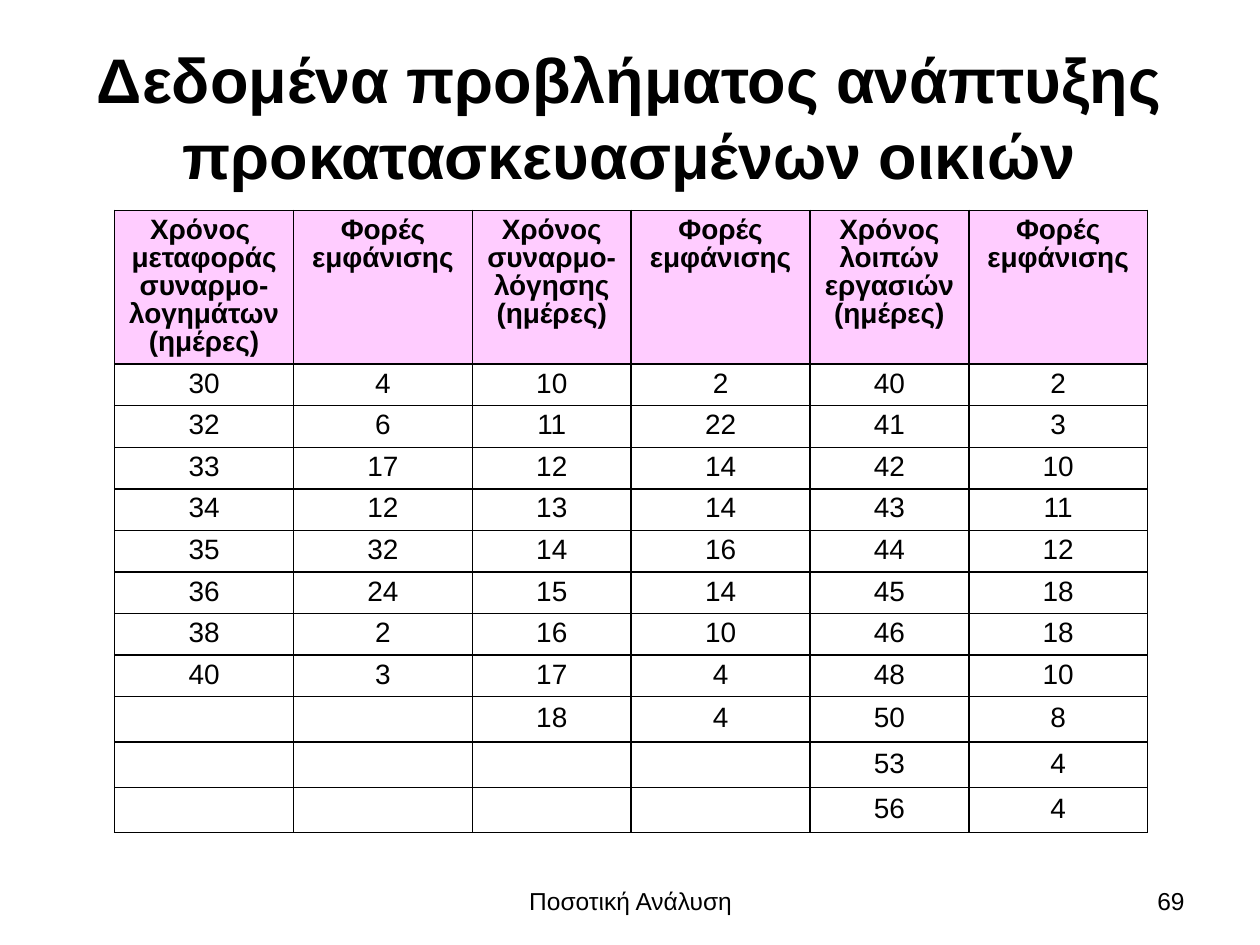
from lxml import etree
from pptx import Presentation, util as u
from pptx.dml.color import RGBColor
from pptx.enum import text
from pptx.oxml import ns

FONT = "Arial"
BLACK, PINK = "000000", "FFCCFF"
TITLE = "Δεδομένα προβλήματος ανάπτυξης προκατασκευασμένων οικιών"
FREQUENCY = "Φορές εμφάνισης"
HEADERS = [
    "Χρόνος \nμεταφοράς συναρμο-λογημάτων \n(ημέρες)", FREQUENCY,
    "Χρόνος συναρμο-λόγησης\n(ημέρες)", FREQUENCY,
    "Χρόνος λοιπών εργασιών\n(ημέρες)", FREQUENCY,
]
ROWS = [
    (30, 4, 10, 2, 40, 2),
    (32, 6, 11, 22, 41, 3),
    (33, 17, 12, 14, 42, 10),
    (34, 12, 13, 14, 43, 11),
    (35, 32, 14, 16, 44, 12),
    (36, 24, 15, 14, 45, 18),
    (38, 2, 16, 10, 46, 18),
    (40, 3, 17, 4, 48, 10),
    ("", "", 18, 4, 50, 8),
    ("", "", "", "", 53, 4),
    ("", "", "", "", 56, 4),
]
COLUMN_WIDTHS = [1.42, 1.42, 1.26, 1.42, 1.26, 1.42]
HEADER_HEIGHT, FULL_ROW, PARTIAL_ROW = 1.22, 0.33, 0.36
FOOTERS = [
    ("Ποσοτική Ανάλυση", (3.42, 6.95, 3.17, 0.4), text.PP_ALIGN.CENTER),
    ("69", (7.17, 6.95, 2.33, 0.4), text.PP_ALIGN.RIGHT),
]


def color(value):
    return RGBColor.from_string(value)


def write(frame, content, size, bold=False, align=text.PP_ALIGN.CENTER, spacing=None):
    frame.text = content
    frame.word_wrap = True
    for paragraph in frame.paragraphs:
        paragraph.alignment = align
        paragraph.line_spacing = spacing
        paragraph.font.name = FONT
        paragraph.font.size = u.Pt(size)
        paragraph.font.bold = bold
        paragraph.font.color.rgb = color(BLACK)


def add_borders(cell):
    properties = cell._tc.get_or_add_tcPr()
    for index, side in enumerate(("lnL", "lnR", "lnT", "lnB")):
        line = etree.Element(ns.qn(f"a:{side}"), w=str(u.Pt(1)))
        fill = etree.SubElement(line, ns.qn("a:solidFill"))
        etree.SubElement(fill, ns.qn("a:srgbClr"), val=BLACK)
        properties.insert(index, line)


def fill_cell(cell, content, is_header):
    cell.margin_left = cell.margin_right = u.Inches(0.11)
    cell.margin_top = cell.margin_bottom = u.Inches(0.05)
    cell.vertical_anchor = text.MSO_ANCHOR.TOP if is_header else text.MSO_ANCHOR.MIDDLE
    if is_header:
        cell.fill.solid()
        cell.fill.fore_color.rgb = color(PINK)
    else:
        cell.fill.background()
    add_borders(cell)
    write(cell.text_frame, content, 16, bold=is_header, spacing=0.9)
    if not content:
        # An empty cell takes its line height from the end-of-paragraph size.
        paragraph = cell.text_frame.paragraphs[0]
        etree.SubElement(paragraph._p, ns.qn("a:endParaRPr"), sz="1600")


def add_data_table(slide):
    heights = [HEADER_HEIGHT] + [PARTIAL_ROW if "" in row else FULL_ROW for row in ROWS]
    table = slide.shapes.add_table(
        len(heights), len(COLUMN_WIDTHS), u.Inches(0.91), u.Inches(1.67),
        u.Inches(sum(COLUMN_WIDTHS)), u.Inches(sum(heights))).table
    table.horz_banding = False
    for column, width in zip(table.columns, COLUMN_WIDTHS):
        column.width = u.Inches(width)
    for row, height, values in zip(table.rows, heights, [HEADERS] + ROWS):
        row.height = u.Inches(height)
        for cell, value in zip(row.cells, values):
            fill_cell(cell, str(value), values is HEADERS)


def main():
    presentation = Presentation()
    presentation.slide_width, presentation.slide_height = u.Inches(10), u.Inches(7.5)
    slide = presentation.slides.add_slide(presentation.slide_layouts[5])

    title = slide.shapes.title
    title.left, title.top, title.width, title.height = map(u.Inches, (0.43, 0.3, 9.13, 1.25))
    write(title.text_frame, TITLE, 36, bold=True)
    title.text_frame.vertical_anchor = text.MSO_ANCHOR.MIDDLE

    add_data_table(slide)

    for content, box, align in FOOTERS:
        frame = slide.shapes.add_textbox(*map(u.Inches, box)).text_frame
        write(frame, content, 14, align=align)
        frame.vertical_anchor = text.MSO_ANCHOR.MIDDLE

    presentation.save("out.pptx")


if __name__ == "__main__":
    main()
